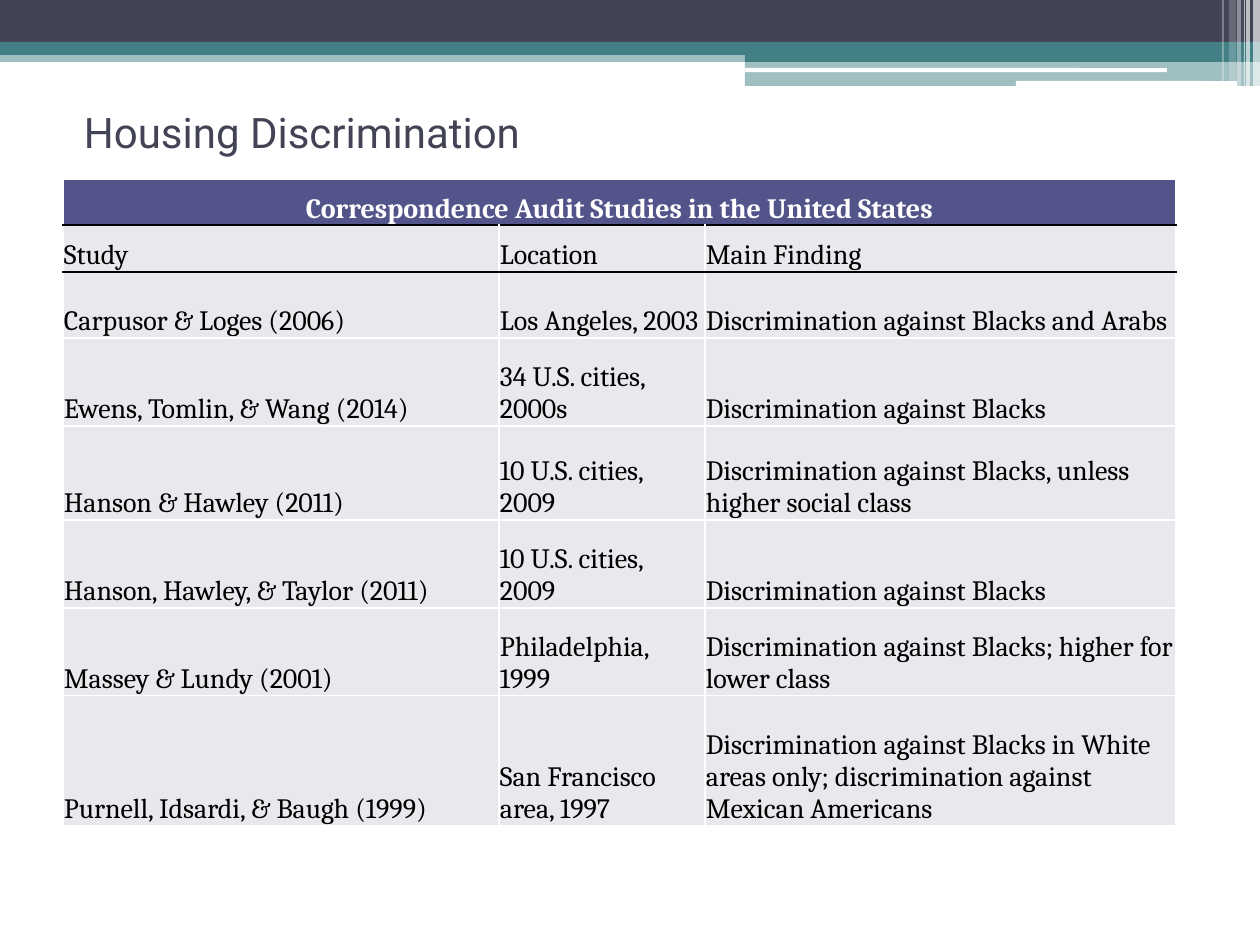
from typing import NamedTuple

import lxml.etree
import pptx
import pptx.dml.color
import pptx.enum.shapes
import pptx.enum.text
import pptx.oxml
import pptx.oxml.ns
import pptx.util

PIXELS_PER_INCH = 126
SLATE = pptx.dml.color.RGBColor(0x42, 0x44, 0x56)
TEAL = pptx.dml.color.RGBColor(0x43, 0x80, 0x86)
PURPLE = pptx.dml.color.RGBColor(0x53, 0x54, 0x8A)
PALE_GRAY = pptx.dml.color.RGBColor(0xE9, 0xE9, 0xED)
WHITE = pptx.dml.color.RGBColor(0xFF, 0xFF, 0xFF)
BLACK = pptx.dml.color.RGBColor(0x00, 0x00, 0x00)


class Band(NamedTuple):
    left: int
    top: int
    width: int
    height: int
    color: pptx.dml.color.RGBColor
    opacity: int = 100
    rounded: bool = False


class Stripe(NamedTuple):
    left: int
    width: int
    height: int
    opacity: int


BANDS = [
    Band(0, 50, 1260, 12, TEAL, 50),
    Band(0, 0, 1260, 42, SLATE),
    Band(0, 42, 1260, 13, TEAL),
    Band(745, 49, 515, 13, TEAL),
    Band(745, 61, 515, 25, TEAL, 50),
    Band(745, 68, 422, 4, WHITE, rounded=True),
    Band(1016, 81, 221, 5, WHITE, rounded=True),
]
STRIPES = [
    Stripe(1253, 7, 86, 65),
    Stripe(1246, 4, 86, 65),
    Stripe(1244, 1, 86, 60),
    Stripe(1237, 4, 86, 40),
    Stripe(1229, 7, 81, 20),
    Stripe(1222, 2, 81, 30),
]

TABLE_TITLE = "Correspondence Audit Studies in the United States"
TABLE_ROWS = [
    (TABLE_TITLE, "", ""),
    ("Study", "Location", "Main Finding"),
    ("Carpusor & Loges (2006)", "Los Angeles, 2003", "Discrimination against Blacks and Arabs"),
    ("Ewens, Tomlin, & Wang (2014)", "34 U.S. cities, 2000s", "Discrimination against Blacks"),
    ("Hanson & Hawley (2011)", "10 U.S. cities, 2009",
     "Discrimination against Blacks, unless higher social class"),
    ("Hanson, Hawley, & Taylor (2011)", "10 U.S. cities, 2009", "Discrimination against Blacks"),
    ("Massey & Lundy (2001)", "Philadelphia, 1999",
     "Discrimination against Blacks; higher for lower class"),
    ("Purnell, Idsardi, & Baugh (1999)", "San Francisco area, 1997",
     "Discrimination against Blacks in White areas only; "
     "discrimination against Mexican Americans"),
]
COLUMN_WIDTHS = [436, 206, 471]
ROW_HEIGHTS = [46, 47, 66, 88, 94, 88, 88, 130]
RULED_ROWS = (0, 1)


def px(length: int) -> int:
    return pptx.util.Inches(length / PIXELS_PER_INCH)


def add_band(slide, band: Band) -> None:
    preset = pptx.enum.shapes.MSO_SHAPE
    kind = preset.ROUNDED_RECTANGLE if band.rounded else preset.RECTANGLE
    shape = slide.shapes.add_shape(
        kind, px(band.left), px(band.top), px(band.width), px(band.height)
    )
    shape.shadow.inherit = False
    shape.line.fill.background()
    shape.fill.solid()
    shape.fill.fore_color.rgb = band.color
    if band.opacity < 100:
        color = shape._element.spPr.find(".//" + pptx.oxml.ns.qn("a:srgbClr"))
        alpha = lxml.etree.SubElement(color, pptx.oxml.ns.qn("a:alpha"))
        alpha.set("val", str(band.opacity * 1000))


def add_title(slide, text: str) -> None:
    title = slide.shapes.add_textbox(px(63), px(95), px(1134), px(73))
    frame = title.text_frame
    frame.word_wrap = True
    frame.vertical_anchor = pptx.enum.text.MSO_ANCHOR.MIDDLE
    frame.margin_left = px(21)
    paragraph = frame.paragraphs[0]
    paragraph.text = text
    paragraph.font.name = "Roboto"
    paragraph.font.size = pptx.util.Pt(24)
    paragraph.font.color.rgb = SLATE


def set_borders(cell, top: pptx.dml.color.RGBColor, bottom: pptx.dml.color.RGBColor) -> None:
    properties = cell._tc.get_or_add_tcPr()
    sides = [("L", WHITE), ("R", WHITE), ("T", top), ("B", bottom)]
    for position, (side, color) in enumerate(sides):
        line = pptx.oxml.parse_xml(
            f'<a:ln{side} {pptx.oxml.ns.nsdecls("a")} w="12700">'
            f'<a:solidFill><a:srgbClr val="{color}"/></a:solidFill></a:ln{side}>'
        )
        properties.insert(position, line)


def fill_cell(cell, text: str, row: int) -> None:
    heading = row == 0
    cell.fill.solid()
    cell.fill.fore_color.rgb = PURPLE if heading else PALE_GRAY
    cell.vertical_anchor = pptx.enum.text.MSO_ANCHOR.BOTTOM
    cell.margin_left = cell.margin_top = cell.margin_right = px(1)
    cell.margin_bottom = 0
    set_borders(
        cell,
        BLACK if row - 1 in RULED_ROWS else WHITE,
        BLACK if row in RULED_ROWS else WHITE,
    )
    paragraph = cell.text_frame.paragraphs[0]
    paragraph.text = text
    alignment = pptx.enum.text.PP_ALIGN
    paragraph.alignment = alignment.CENTER if heading else alignment.LEFT
    paragraph.font.name = "Cambria"
    paragraph.font.size = pptx.util.Pt(16)
    paragraph.font.bold = heading
    paragraph.font.color.rgb = WHITE if heading else BLACK


def add_study_table(slide) -> None:
    table = slide.shapes.add_table(
        len(TABLE_ROWS), len(COLUMN_WIDTHS),
        px(63), px(179), px(sum(COLUMN_WIDTHS)), px(sum(ROW_HEIGHTS)),
    ).table
    table.first_row = False
    table.horz_banding = False
    for column, width in zip(table.columns, COLUMN_WIDTHS):
        column.width = px(width)
    for row, height in zip(table.rows, ROW_HEIGHTS):
        row.height = px(height)
    for row, texts in enumerate(TABLE_ROWS):
        for column, text in enumerate(texts):
            fill_cell(table.cell(row, column), text, row)
    table.cell(0, 0).merge(table.cell(0, len(COLUMN_WIDTHS) - 1))


def main() -> None:
    presentation = pptx.Presentation()
    presentation.slide_width = px(1260)
    presentation.slide_height = px(945)
    slide = presentation.slides.add_slide(presentation.slide_layouts[6])
    for band in BANDS:
        add_band(slide, band)
    for stripe in STRIPES:
        add_band(slide, Band(stripe.left, 0, stripe.width, stripe.height, WHITE, stripe.opacity))
    add_title(slide, "Housing Discrimination")
    add_study_table(slide)
    presentation.save("out.pptx")


if __name__ == "__main__":
    main()
